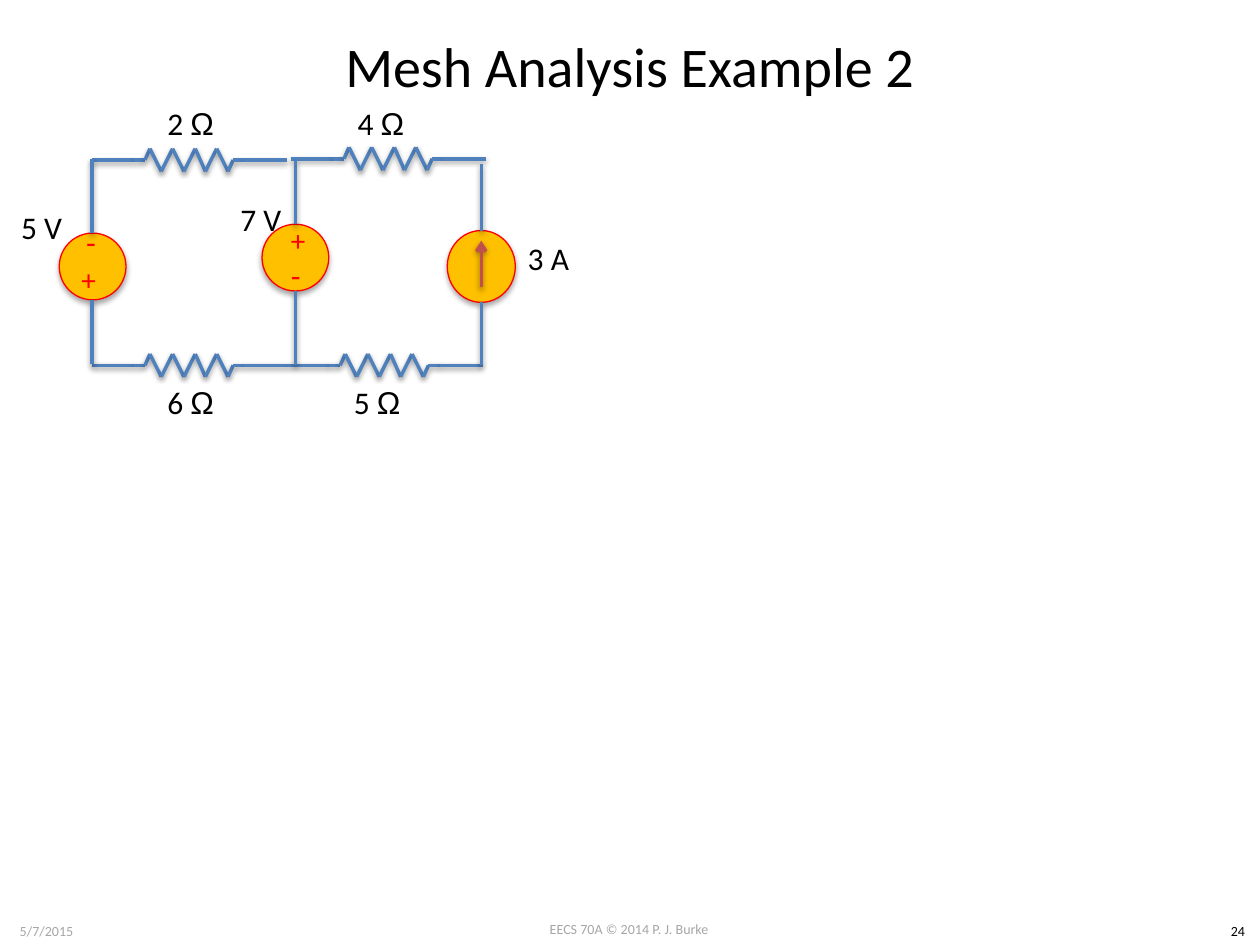
import pptx
import pptx.util
import pptx.dml.color
import pptx.enum.shapes
import pptx.enum.text
import lxml.etree

Inches = pptx.util.Inches
Pt = pptx.util.Pt
Color = pptx.dml.color.RGBColor
Align = pptx.enum.text.PP_ALIGN
Anchor = pptx.enum.text.MSO_ANCHOR

BLACK = Color(0x00, 0x00, 0x00)
GRAY = Color(0xA6, 0xA6, 0xA6)
BLUE = Color(0x4F, 0x81, 0xBD)
BRICK = Color(0xC0, 0x50, 0x4D)
GOLD = Color(0xFF, 0xC0, 0x00)
RED = Color(0xFF, 0x00, 0x00)


def label(shapes, text, left, top, width, height, size=18, color=BLACK, align=Align.CENTER):
    box = shapes.add_textbox(Inches(left), Inches(top), Inches(width), Inches(height))
    frame = box.text_frame
    frame.word_wrap = True
    par = frame.paragraphs[0]
    par.alignment = align
    par.font.size = Pt(size)
    par.font.name = "Calibri"
    par.font.color.rgb = color
    par.add_run().text = text
    return box


def wire(shapes, start, end, color=BLUE):
    line = shapes.add_connector(
        pptx.enum.shapes.MSO_CONNECTOR.STRAIGHT,
        Inches(start[0]), Inches(start[1]), Inches(end[0]), Inches(end[1]))
    line.line.color.rgb = color
    line.line.width = Pt(2)
    return line


deck = pptx.Presentation()
deck.slide_width = Inches(10)
deck.slide_height = Inches(7.5)
slide = deck.slides.add_slide(deck.slide_layouts[5])
shapes = slide.shapes

title = shapes.title
title.left, title.top = Inches(0.5), Inches(-0.11)
title.width, title.height = Inches(9), Inches(1.25)
title.text_frame.text = "Mesh Analysis Example 2"
title.text_frame.vertical_anchor = Anchor.MIDDLE
head = title.text_frame.paragraphs[0]
head.alignment = Align.CENTER
head.font.size = Pt(32)
head.font.name = "Calibri"
head.font.color.rgb = BLACK

for text, left, top, width, color in [
    ("EECS 70A © 2014 P. J. Burke", 3.83, 7.26, 2.33, GRAY),
    ("5/7/2015", 0, 7.27, 0.74, GRAY),
    ("24", 9.65, 7.27, 0.35, BLACK),
]:
    label(shapes, text, left, top, width, 0.24, 8, color)

steps = [0, 0.33, 0.42, 0.46, 0.55, 0.64, 0.73, 0.82, 0.9, 0.99, 1.08, 1.12, 1.21, 1.55]
rises = [0, 0, 0] + [-0.09, 0.09] * 4 + [0, 0, 0]
for ohms, left, mid, textx, texty in [
    ("2 ", 0.73, 1.27, 1.23, 0.78),
    ("6 ", 0.73, 2.9, 1.23, 2.99),
    ("5 ", 2.28, 2.9, 2.71, 2.99),
    ("4 ", 2.31, 1.26, 2.74, 0.78),
]:
    group = shapes.add_group_shape()
    points = [(left + step, mid + rise) for step, rise in zip(steps, rises)]
    for start, end in zip(points, points[1:]):
        wire(group.shapes, start, end)
    box = label(shapes, ohms, textx, texty, 0.58, 0.4, align=Align.LEFT)
    box.text_frame.word_wrap = False
    omega = box.text_frame.paragraphs[0].add_run()
    omega.text = "Ω"
    omega.font.name = "Arial"

for left, top, width, height, mid, high, low, turn, signs in [
    (2.08, 1.78, 0.53, 0.53, 2.345, 1.28, 2.9, 0, [("+", 1.74, 16.6), ("-", 2.02, 18)]),
    (3.55, 1.83, 0.54, 0.57, 3.82, 1.3, 2.9, 0, []),
    (0.47, 1.85, 0.53, 0.53, 0.73, 1.26, 2.89, 180, [("+", 2.09, 16.6), ("-", 1.81, 18)]),
]:
    group = shapes.add_group_shape()
    disk = group.shapes.add_shape(
        pptx.enum.shapes.MSO_SHAPE.OVAL,
        Inches(left), Inches(top), Inches(width), Inches(height))
    disk.rotation = turn
    disk.fill.solid()
    disk.fill.fore_color.rgb = GOLD
    disk.line.color.rgb = RED
    disk.line.width = Pt(0.75)
    for sign, texty, size in signs:
        box = label(group.shapes, sign, left + 0.13, texty, 0.26, 0.33, size, RED)
        box.text_frame.vertical_anchor = Anchor.MIDDLE
        box.rotation = turn
    if not signs:
        arrow = wire(group.shapes, (mid, 2.28), (mid, 1.91), BRICK)
        tip = lxml.etree.SubElement(
            arrow.line._get_or_add_ln(),
            "{http://schemas.openxmlformats.org/drawingml/2006/main}tailEnd")
        tip.set("type", "arrow")
    wire(group.shapes, (mid, high), (mid, top))
    wire(group.shapes, (mid, top + height), (mid, low))

for text, left, top in [("7 V", 1.81, 1.54), ("3 A", 4.09, 1.85), ("5 V", 0.07, 1.6)]:
    box = label(shapes, text, left, top, 0.53, 0.4, align=Align.LEFT)
    box.text_frame.word_wrap = False

deck.save("out.pptx")
